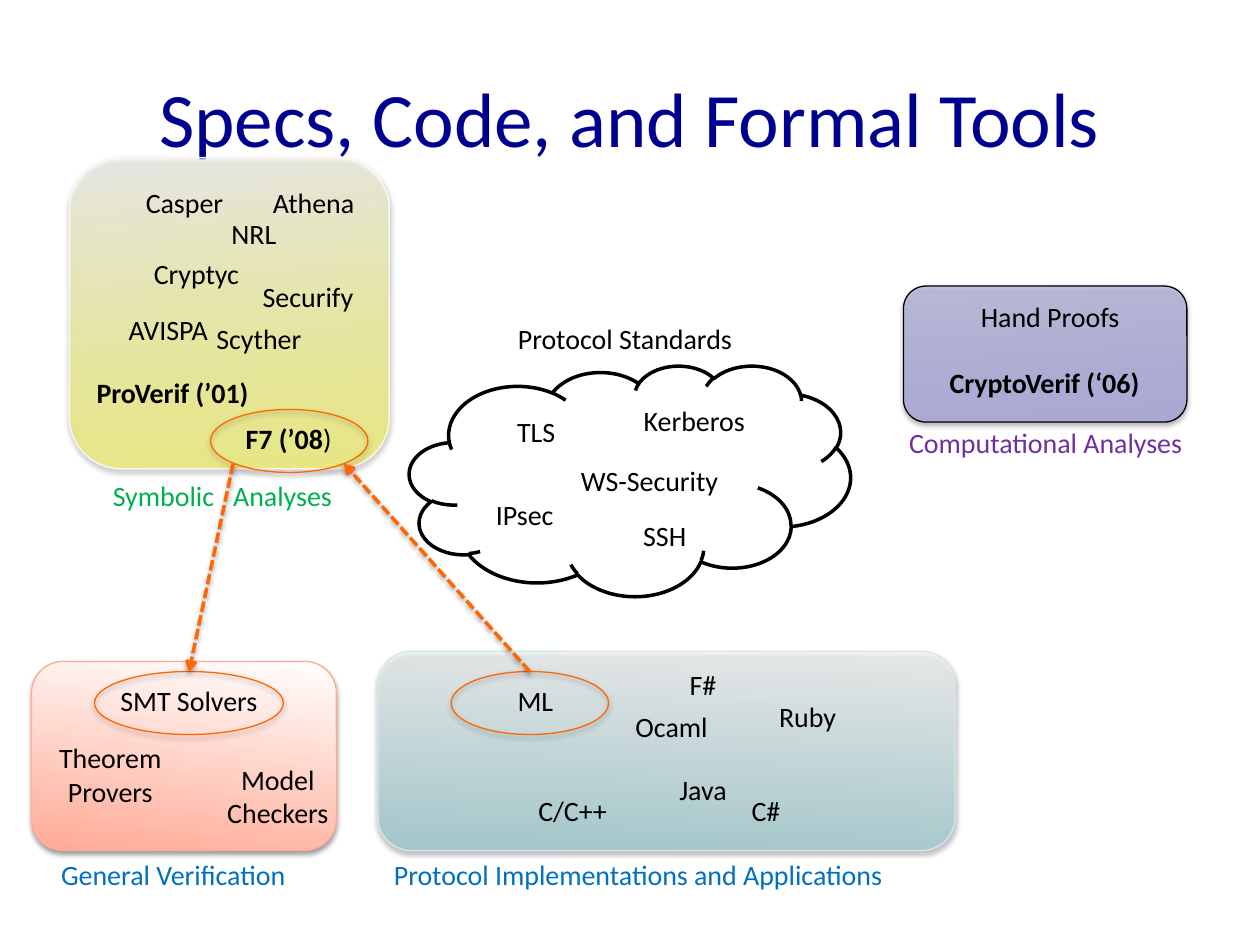
from lxml.etree import SubElement
from pptx import Presentation
from pptx.dml.color import RGBColor
from pptx.enum.dml import MSO_LINE
from pptx.enum.shapes import MSO_CONNECTOR, MSO_SHAPE as Shape
from pptx.enum.text import MSO_ANCHOR, PP_ALIGN
from pptx.oxml.ns import qn
from pptx.util import Inches, Pt

COLORS = {
    "title": "000090", "black": "000000", "white": "FFFFFF",
    "green": "00B050", "purple": "7030A0", "blue": "0070C0",
    "orange": "FF6600", "yellow": "FFFF00", "lavender": "A3A3E0",
    "teal": "8AC6CD", "salmon": "FFAA95",
    "teal edge": "D5E8EA", "pale edge": "F9F9F9",
}

# text, left, top, width
STANDARDS = [
    ("TLS", 4, 3.24, 0.51), ("Kerberos", 5, 3.15, 1.02),
    ("WS-Security", 4.5, 3.63, 1.31), ("IPsec", 3.83, 3.9, 0.67),
    ("SSH", 5, 4.07, 0.55), ("Protocol Standards", 4, 2.5, 1.92),
]
LANGUAGES = [
    ("C/C++", 4.17, 6.25, 0.75), ("Java", 5.08, 6.08, 1),
    ("ML", 3.75, 5.38, 1), ("C#", 5.58, 6.25, 1), ("F#", 5.08, 5.25, 1),
    ("Ruby", 6.08, 5.5, 0.66), ("Ocaml", 4.83, 5.58, 1),
]
SYMBOLIC_TOOLS = [
    ("Casper", 0.88, 1.42, 1.17), ("Athena", 2.06, 1.42, 0.86),
    ("NRL", 1.43, 1.67, 1.17), ("Cryptyc", 0.56, 1.99, 2),
    ("Securify", 1.98, 2.17, 0.93), ("AVISPA", 0.75, 2.43, 1.17),
    ("Scyther", 1.61, 2.5, 0.89),
]


def rgb(name):
    return RGBColor.from_string(COLORS[name])


def add_label(page, text, x, y, w, h=0.37, color="black", bold=False,
              size=16, wrap=False):
    box = page.shapes.add_textbox(Inches(x), Inches(y), Inches(w), Inches(h))
    box.text_frame.word_wrap = wrap
    para = box.text_frame.paragraphs[0]
    para.text = text
    para.alignment = PP_ALIGN.CENTER
    para.font.size = Pt(size)
    para.font.name = "Calibri"
    para.font.bold = bold
    para.font.color.rgb = rgb(color)
    return box


def add_labels(page, labels):
    for label in labels:
        add_label(page, *label)


def add_span(para, text, bold=None):
    span = para.add_run()
    span.text = text
    span.font.bold = bold
    return span


def add_shadow(shape, alpha=38, distance=1.6):
    """Soft shadow falling straight down; call after the line is set."""
    effects = SubElement(shape._element.spPr, qn("a:effectLst"))
    shadow = SubElement(effects, qn("a:outerShdw"), blurRad=str(Pt(3.1)),
                        dist=str(Pt(distance)), dir="5400000", rotWithShape="0")
    color = SubElement(shadow, qn("a:srgbClr"), val=COLORS["black"])
    SubElement(color, qn("a:alpha"), val=str(alpha * 1000))


def add_outlined(page, kind, x, y, w, h, color, width=0.75):
    shape = page.shapes.add_shape(kind, Inches(x), Inches(y), Inches(w), Inches(h))
    shape.line.color.rgb = rgb(color)
    shape.line.width = Pt(width)
    return shape


def add_panel(page, x, y, w, h, stops, angle, edge):
    """Rounded panel; stops are (colour, opacity) pairs from start to end."""
    panel = add_outlined(page, Shape.ROUNDED_RECTANGLE, x, y, w, h, edge)
    panel.fill.gradient()
    panel.fill.gradient_angle = angle
    for stop, (color, _) in zip(panel.fill.gradient_stops, stops):
        stop.color.rgb = rgb(color)
    gradient = panel._element.spPr.find(qn("a:gradFill"))
    for element, (_, opacity) in zip(gradient.iter(qn("a:srgbClr")), stops):
        SubElement(element, qn("a:alpha"), val=str(opacity * 1000))
    add_shadow(panel)


def add_ring(page, x, y, w):
    ring = add_outlined(page, Shape.OVAL, x, y, w, 0.5, "orange")
    ring.fill.background()
    add_shadow(ring, 35, 1.8)
    return ring


def add_arrow(page, start, end):
    arrow = page.shapes.add_connector(
        MSO_CONNECTOR.STRAIGHT, *(Inches(value) for value in start + end))
    arrow.line.color.rgb = rgb("orange")
    arrow.line.width = Pt(2)
    arrow.line.dash_style = MSO_LINE.SQUARE_DOT
    SubElement(arrow._element.spPr.find(qn("a:ln")), qn("a:tailEnd"), type="arrow")
    add_shadow(arrow)
    return arrow


def add_standards(page):
    cloud = add_outlined(page, Shape.CLOUD, 3.25, 2.9, 3.5, 1.83, "black", 2)
    cloud.fill.solid()
    cloud.fill.fore_color.rgb = rgb("white")
    cloud.shadow.inherit = False
    add_labels(page, STANDARDS)


def add_implementations(page):
    add_panel(page, 3, 5.17, 4.58, 1.58, [("teal", 58), ("white", 58)], 88, "teal edge")
    add_label(page, "Protocol Implementations and Applications",
              3, 6.76, 4.13, color="blue")
    add_labels(page, LANGUAGES)


def add_symbolic(page):
    add_panel(page, 0.55, 1.25, 2.54, 2.47, [("yellow", 39), ("white", 55)], 95, "pale edge")
    add_labels(page, SYMBOLIC_TOOLS)
    add_label(page, "ProVerif (’01)", 0.58, 2.93, 1.58, bold=True)
    caption = add_label(page, "", 0.58, 3.75, 2.37, color="green")
    para = caption.text_frame.paragraphs[0]
    add_span(para, "Symbolic")
    gap = add_span(para, " ")
    gap.font._element.set("spc", "720")  # widens the gap between the words
    add_span(para, "Analyses")
    newest = add_label(page, "", 1.5, 3.3, 1.58)
    para = newest.text_frame.paragraphs[0]
    add_span(para, "F7 (’08", bold=True)
    add_span(para, ")", bold=False)


def add_computational(page):
    add_panel(page, 7.17, 2.27, 2.25, 1.08, [("lavender", 73), ("lavender", 49)], 94, "black")
    add_label(page, "Computational Analyses", 7.1, 3.33, 2.4, color="purple")
    add_label(page, "CryptoVerif (‘06)", 7.25, 2.85, 2.08, bold=True)
    add_label(page, "Hand Proofs", 7.5, 2.33, 1.67)


def add_verification(page):
    add_panel(page, 0.25, 5.25, 2.42, 1.5, [("salmon", 100), ("white", 100)], 82, "salmon")
    add_label(page, "General Verification", 0.37, 6.76, 2.01, color="blue")
    add_label(page, "SMT Solvers", 0.75, 5.38, 1.5)
    add_label(page, "Theorem Provers", 0.25, 5.83, 1.25, 0.64, wrap=True)
    add_label(page, "Model\vCheckers", 1.58, 6, 1.25, 0.64)


def add_tool_chain(page):
    """Ring F7, ML and the solvers, and join them with dashed arrows."""
    add_ring(page, 1.67, 3.25, 1.25)
    ml_ring = add_ring(page, 3.58, 5.33, 1.25)
    solver_ring = add_ring(page, 0.75, 5.33, 1.5)
    add_arrow(page, (4.21, 5.33), (2.73, 3.68)).begin_connect(ml_ring, 0)
    add_arrow(page, (1.85, 3.68), (1.5, 5.33)).end_connect(solver_ring, 0)


def main():
    deck = Presentation()
    deck.slide_width, deck.slide_height = Inches(10), Inches(7.5)
    page = deck.slides.add_slide(deck.slide_layouts[6])
    title = add_label(page, "Specs, Code, and Formal Tools", 0.5, 0.3, 9, 1.25,
                      color="title", size=44, wrap=True)
    title.text_frame.vertical_anchor = MSO_ANCHOR.MIDDLE
    add_standards(page)
    add_implementations(page)
    add_symbolic(page)
    add_computational(page)
    add_verification(page)
    add_tool_chain(page)
    deck.save("out.pptx")


if __name__ == "__main__":
    main()
